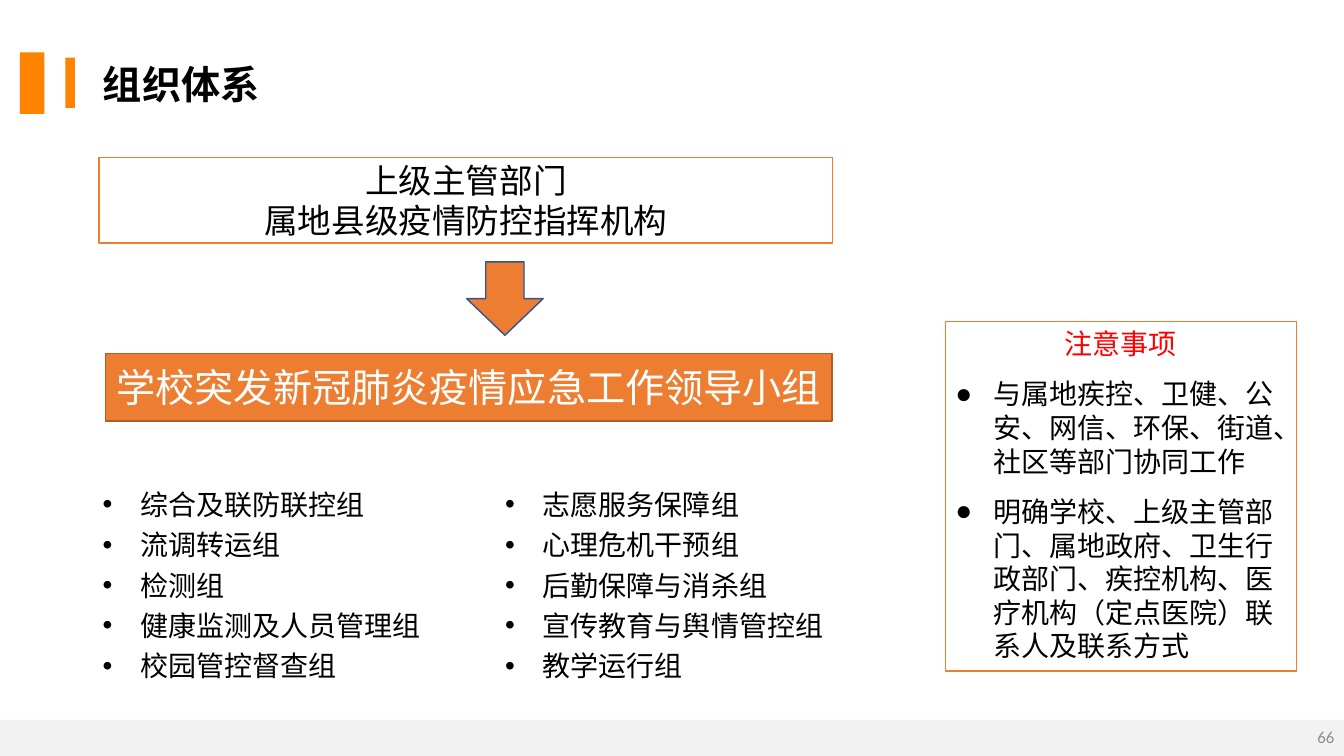
"""Builds the slide on the organisation of campus epidemic response."""
import dataclasses

import pptx
import pptx.dml.color
import pptx.enum.shapes
import pptx.enum.text
import pptx.oxml.ns
import pptx.util
from lxml import etree

Cm = pptx.util.Cm
Pt = pptx.util.Pt
Shape = pptx.enum.shapes.MSO_SHAPE
Align = pptx.enum.text.PP_ALIGN
Anchor = pptx.enum.text.MSO_ANCHOR


@dataclasses.dataclass(frozen=True)
class Theme:
    """Fonts, colours and type sizes of the slide."""
    font: str = "Noto Sans CJK SC"
    number_font: str = "Calibri"
    black: str = "000000"
    white: str = "FFFFFF"
    red: str = "FF0000"
    grey: str = "8C8C8C"
    footer: str = "F2F2F2"
    marker: str = "FD8301"
    orange: str = "ED7D31"
    brown: str = "AF5C24"
    blue: str = "325491"
    heading: int = 28
    authority: int = 24
    body: int = 20
    number: int = 12


THEME = Theme()
GROUPS = ["综合及联防联控组", "流调转运组", "检测组", "健康监测及人员管理组", "校园管控督查组",
          "志愿服务保障组", "心理危机干预组", "后勤保障与消杀组", "宣传教育与舆情管控组", "教学运行组"]
NOTES = ["与属地疾控、卫健、公安、网信、环保、街道、社区等部门协同工作",
         "明确学校、上级主管部门、属地政府、卫生行政部门、疾控机构、医疗机构（定点医院）联系人及联系方式"]


def rgb(colour):
    """Return a colour object for a hex string."""
    return pptx.dml.color.RGBColor.from_string(colour)


def apply(target, values):
    """Set each named attribute of the target."""
    for name, value in values.items():
        setattr(target, name, value)


def add_block(page, kind, place, fill, line=None):
    """Add a flat preset shape, outlined if a line colour is given."""
    block = page.shapes.add_shape(kind, *map(Cm, place))
    block.shadow.inherit = False
    block.fill.solid()
    block.fill.fore_color.rgb = rgb(fill)
    if line:
        block.line.color.rgb = rgb(line)
        block.line.width = Pt(1)
    else:
        block.line.fill.background()
    return block


def set_frame(box, anchor=Anchor.MIDDLE):
    """Give a box wrapped text with the chosen vertical anchor."""
    apply(box.text_frame, {"word_wrap": True, "vertical_anchor": anchor})


def add_bullet(para, mark):
    """Give a paragraph a hanging bullet."""
    properties = para._p.get_or_add_pPr()
    properties.set("marL", str(Cm(0.95)))
    properties.set("indent", str(-Cm(0.95)))
    etree.SubElement(properties, pptx.oxml.ns.qn("a:buFont")).set("typeface", "Arial")
    etree.SubElement(properties, pptx.oxml.ns.qn("a:buChar")).set("char", mark)


def write(box, lines, size, colour, font=THEME.font, bold=False, mark=None, **layout):
    """Write paragraphs of one format into a box, after any text it holds."""
    frame = box.text_frame
    for line in lines:
        para = frame.add_paragraph() if frame.text else frame.paragraphs[0]
        apply(para, layout)
        if mark:
            add_bullet(para, mark)
        span = para.add_run()
        span.text = line
        apply(span.font, {"name": font, "size": Pt(size), "bold": bold})
        span.font.color.rgb = rgb(colour)
        east_asian = etree.SubElement(span.font._element, pptx.oxml.ns.qn("a:ea"))
        east_asian.set("typeface", font)


def add_text(page, place, anchor=Anchor.MIDDLE):
    """Add an empty wrapping text box."""
    box = page.shapes.add_textbox(*map(Cm, place))
    set_frame(box, anchor)
    return box


def add_title(page, text):
    """Place and format the title placeholder."""
    title = page.shapes.title
    apply(title, dict(zip(("left", "top", "width", "height"), map(Cm, (2.34, 1.02, 29.2, 2.16)))))
    set_frame(title)
    write(title, [text], THEME.heading, THEME.black, bold=True, alignment=Align.LEFT)


def add_decor(page):
    """Add the footer band, title markers and page number."""
    add_block(page, Shape.RECTANGLE, (0, 18.14, 33.87, 0.91), THEME.footer)
    for place in ((1.65, 1.45, 0.24, 1.27), (0.5, 1.32, 0.62, 1.55)):
        add_block(page, Shape.RECTANGLE, place, THEME.marker)
    number = add_text(page, (26.26, 18.06, 7.62, 1.02))
    write(number, ["66"], THEME.number, THEME.grey, THEME.number_font, alignment=Align.RIGHT)


def add_hierarchy(page):
    """Add the authorities, the arrow and the leading group."""
    leaders = add_block(page, Shape.RECTANGLE, (2.66, 8.91, 18.31, 1.7), THEME.orange, THEME.brown)
    authorities = add_block(page, Shape.RECTANGLE, (2.5, 3.97, 18.48, 2.16), THEME.white, THEME.orange)
    add_block(page, Shape.DOWN_ARROW, (11.76, 6.6, 1.93, 1.85), THEME.orange, THEME.blue)
    for box in (leaders, authorities):
        set_frame(box)
    write(leaders, ["学校突发新冠肺炎疫情应急工作领导小组"], THEME.heading, THEME.white,
          alignment=Align.CENTER)
    write(authorities, ["上级主管部门", "属地县级疫情防控指挥机构"], THEME.authority, THEME.black,
          alignment=Align.CENTER)


def add_groups(page):
    """Add the working groups in two text columns."""
    box = add_text(page, (2.34, 11.99, 20.78, 5.31), Anchor.TOP)
    box.text_frame._txBody.bodyPr.set("numCol", "2")
    write(box, GROUPS, THEME.body, THEME.black, mark="•", line_spacing=1.2)


def add_notes_box(page):
    """Add the framed points for attention."""
    box = add_block(page, Shape.RECTANGLE, (23.83, 8.1, 8.84, 8.81), THEME.white, THEME.orange)
    set_frame(box, Anchor.TOP)
    spacing = {"space_before": Pt(6), "space_after": Pt(6)}
    write(box, ["注意事项"], THEME.body, THEME.red, alignment=Align.CENTER, **spacing)
    write(box, NOTES, THEME.body, THEME.black, mark="●", alignment=Align.LEFT, **spacing)


def main():
    """Build and save the deck."""
    deck = pptx.Presentation()
    apply(deck, {"slide_width": Cm(33.87), "slide_height": Cm(19.05)})
    page = deck.slides.add_slide(deck.slide_layouts[5])
    add_decor(page)
    add_title(page, "组织体系")
    add_hierarchy(page)
    add_groups(page)
    add_notes_box(page)
    deck.save("out.pptx")


if __name__ == "__main__":
    main()
